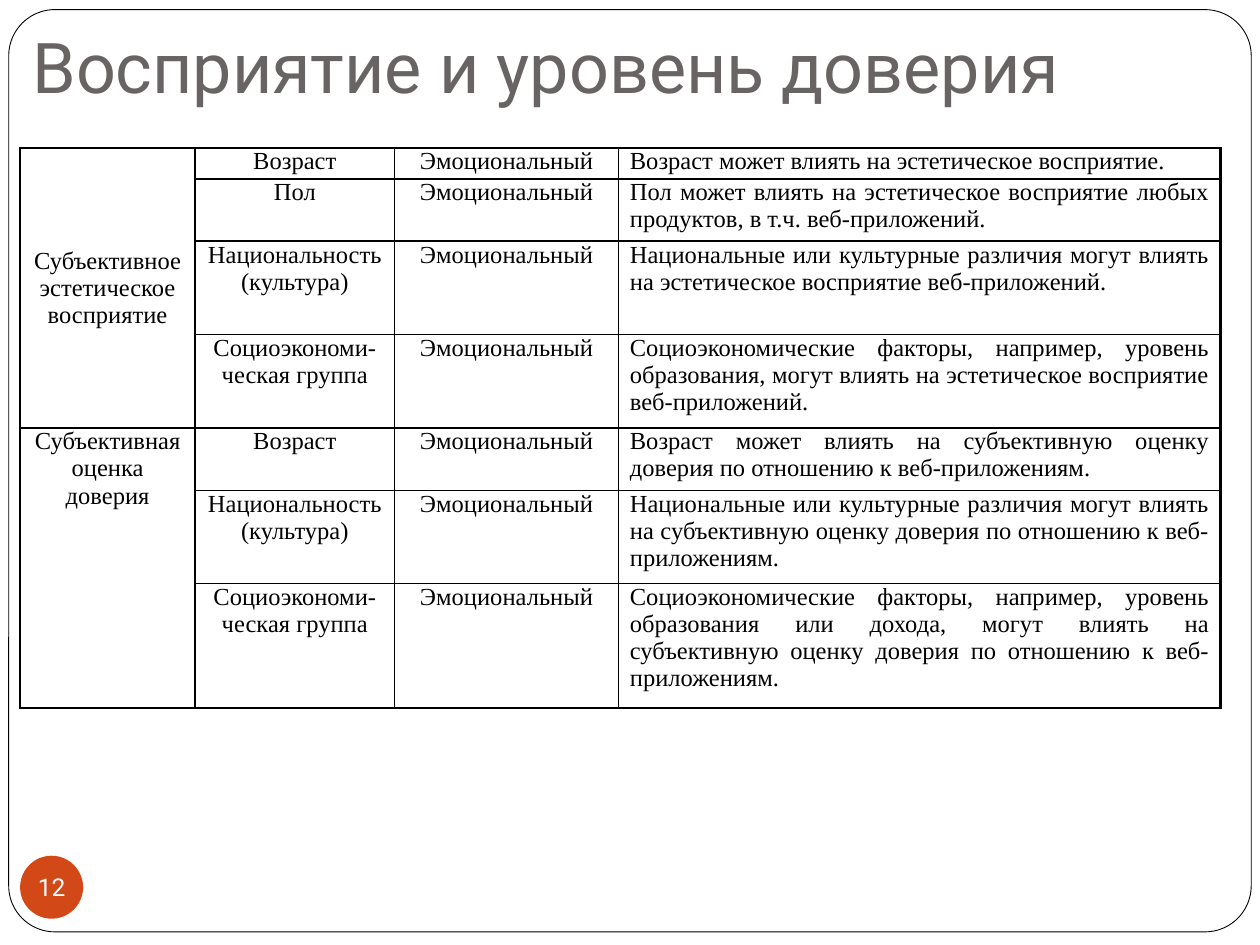
from lxml import etree
from pptx import Presentation
from pptx.dml.color import RGBColor
from pptx.enum.shapes import MSO_SHAPE
from pptx.enum.text import MSO_ANCHOR, PP_ALIGN
from pptx.oxml.ns import qn
from pptx.util import Pt

LEFT, CENTER, JUSTIFY = PP_ALIGN.LEFT, PP_ALIGN.CENTER, PP_ALIGN.JUSTIFY
TOP, MIDDLE, BOTTOM = MSO_ANCHOR.TOP, MSO_ANCHOR.MIDDLE, MSO_ANCHOR.BOTTOM
WHITE = RGBColor(0xFF, 0xFF, 0xFF)
BLACK = RGBColor(0, 0, 0)
GRAY = RGBColor(0x69, 0x64, 0x64)
ORANGE = RGBColor(0xD3, 0x48, 0x17)
SANS, SERIF = "Roboto", "Times New Roman"

TITLE = "Восприятие и уровень доверия"
PAGE_NUMBER = "12"
LEVEL = "Эмоциональный"
AGE = "Возраст"
NATION = "Национальность (культура)"
SOCIAL = "Социоэкономи-ческая группа"

# Group name, its anchor, and rows of (factor, effect, height in row units)
GROUPS = [
    ("Субъективное эстетическое восприятие", MIDDLE, [
        (AGE, "Возраст может влиять на эстетическое восприятие.", 1),
        ("Пол", "Пол может влиять на эстетическое восприятие любых продуктов, "
         "в т.ч. веб-приложений.", 2),
        (NATION, "Национальные или культурные различия могут влиять на "
         "эстетическое восприятие веб-приложений.", 3),
        (SOCIAL, "Социоэкономические факторы, например, уровень образования, "
         "могут влиять на эстетическое восприятие веб-приложений.", 3),
    ]),
    ("Субъективная оценка доверия", TOP, [
        (AGE, "Возраст может влиять на субъективную оценку доверия "
         "по отношению к веб-приложениям.", 2),
        (NATION, "Национальные или культурные различия могут влиять на "
         "субъективную оценку доверия по отношению к веб-приложениям.", 3),
        (SOCIAL, "Социоэкономические факторы, например, уровень образования "
         "или дохода, могут влиять на субъективную оценку доверия "
         "по отношению к веб-приложениям.", 4),
    ]),
]
COLUMN_WIDTHS = [100, 114, 128, 344]
ROW_UNIT = 17.8
MARGIN_LEFT = 11.5
THIN, THICK = 1, 1.5


def write(frame, text, font, size, color, align):
    frame.text = text
    para = frame.paragraphs[0]
    para.alignment = align
    span = para.runs[0]
    span.font.name, span.font.size = font, Pt(size)
    span.font.color.rgb = color
    return para


def set_insets(holder, left, top, right, bottom):
    holder.margin_left, holder.margin_top = Pt(left), Pt(top)
    holder.margin_right, holder.margin_bottom = Pt(right), Pt(bottom)


def add_border(cell, side, width):
    properties = cell._tc.get_or_add_tcPr()
    line = etree.SubElement(properties, qn(f"a:ln{side}"), w=str(Pt(width)))
    fill = etree.SubElement(line, qn("a:solidFill"))
    etree.SubElement(fill, qn("a:srgbClr"), val=str(BLACK))


def fill_cell(cell, text, align, anchor, thick_sides):
    if text:
        para = write(cell.text_frame, text, SERIF, 14, BLACK, align)
        para.space_before = para.space_after = Pt(2)
    set_insets(cell, 6.5, 0, 6.5, 0)
    cell.vertical_anchor = anchor
    for side in "LRTB":
        add_border(cell, side, THICK if side in thick_sides else THIN)
    cell.fill.background()


def add_shape(page, kind, left, top, width, height, fill):
    shape = page.shapes.add_shape(kind, Pt(left), Pt(top), Pt(width), Pt(height))
    shape.shadow.inherit = False
    shape.fill.solid()
    shape.fill.fore_color.rgb = fill
    return shape


def add_factor_table(page):
    heights = [units * ROW_UNIT for _, _, rows in GROUPS for _, _, units in rows]
    table_frame = page.shapes.add_table(
        len(heights), len(COLUMN_WIDTHS), Pt(MARGIN_LEFT), Pt(84.5),
        Pt(sum(COLUMN_WIDTHS)), Pt(sum(heights)))
    table = table_frame.table
    table.first_row = table.horz_banding = False
    for column, width in zip(table.columns, COLUMN_WIDTHS):
        column.width = Pt(width)
    for row, height in zip(table.rows, heights):
        row.height = Pt(height)

    start = 0
    for name, anchor, rows in GROUPS:
        last = len(rows) - 1
        for offset, (factor, effect, _) in enumerate(rows):
            index = start + offset
            edges = ("T" if offset == 0 else "") + ("B" if offset == last else "")
            group_text = name if offset == 0 else ""
            fill_cell(table.cell(index, 0), group_text, CENTER, anchor, "LTB")
            fill_cell(table.cell(index, 1), factor, CENTER, TOP, edges)
            fill_cell(table.cell(index, 2), LEVEL, CENTER, TOP, edges)
            fill_cell(table.cell(index, 3), effect, JUSTIFY, TOP, edges + "R")
        table.cell(start, 0).merge(table.cell(start + last, 0))
        start += len(rows)


def main():
    deck = Presentation()
    deck.slide_width, deck.slide_height = Pt(720), Pt(540)
    page = deck.slides.add_slide(deck.slide_layouts[6])

    border = add_shape(page, MSO_SHAPE.ROUNDED_RECTANGLE, 5, 5.5, 710, 527, WHITE)
    border.adjustments[0] = 0.05
    border.line.color.rgb = BLACK
    border.line.width = Pt(0.5)

    title = page.shapes.add_textbox(Pt(MARGIN_LEFT), Pt(5.8), Pt(698), Pt(62.6))
    frame = title.text_frame
    frame.word_wrap = True
    frame.vertical_anchor = BOTTOM
    set_insets(frame, 7.2, 3.6, 7.2, 7.2)
    write(frame, TITLE, SANS, 40, GRAY, LEFT)

    badge = add_shape(page, MSO_SHAPE.OVAL, MARGIN_LEFT, 489, 36, 36, ORANGE)
    badge.line.fill.background()
    frame = badge.text_frame
    frame.word_wrap = False
    frame.vertical_anchor = MIDDLE
    set_insets(frame, 0, 0, 0, 0)
    write(frame, PAGE_NUMBER, SANS, 14, WHITE, CENTER)

    add_factor_table(page)
    deck.save("out.pptx")


if __name__ == "__main__":
    main()
